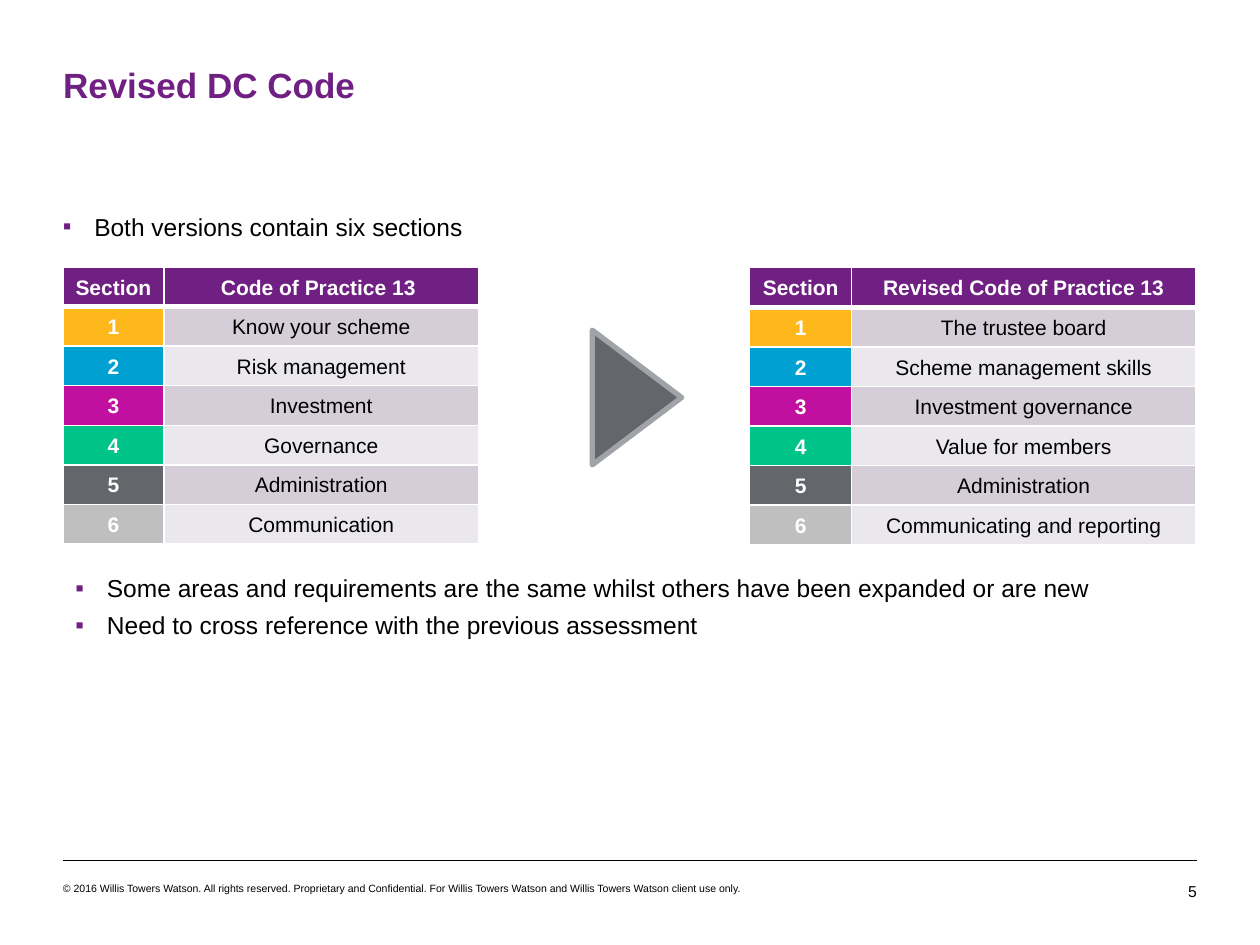
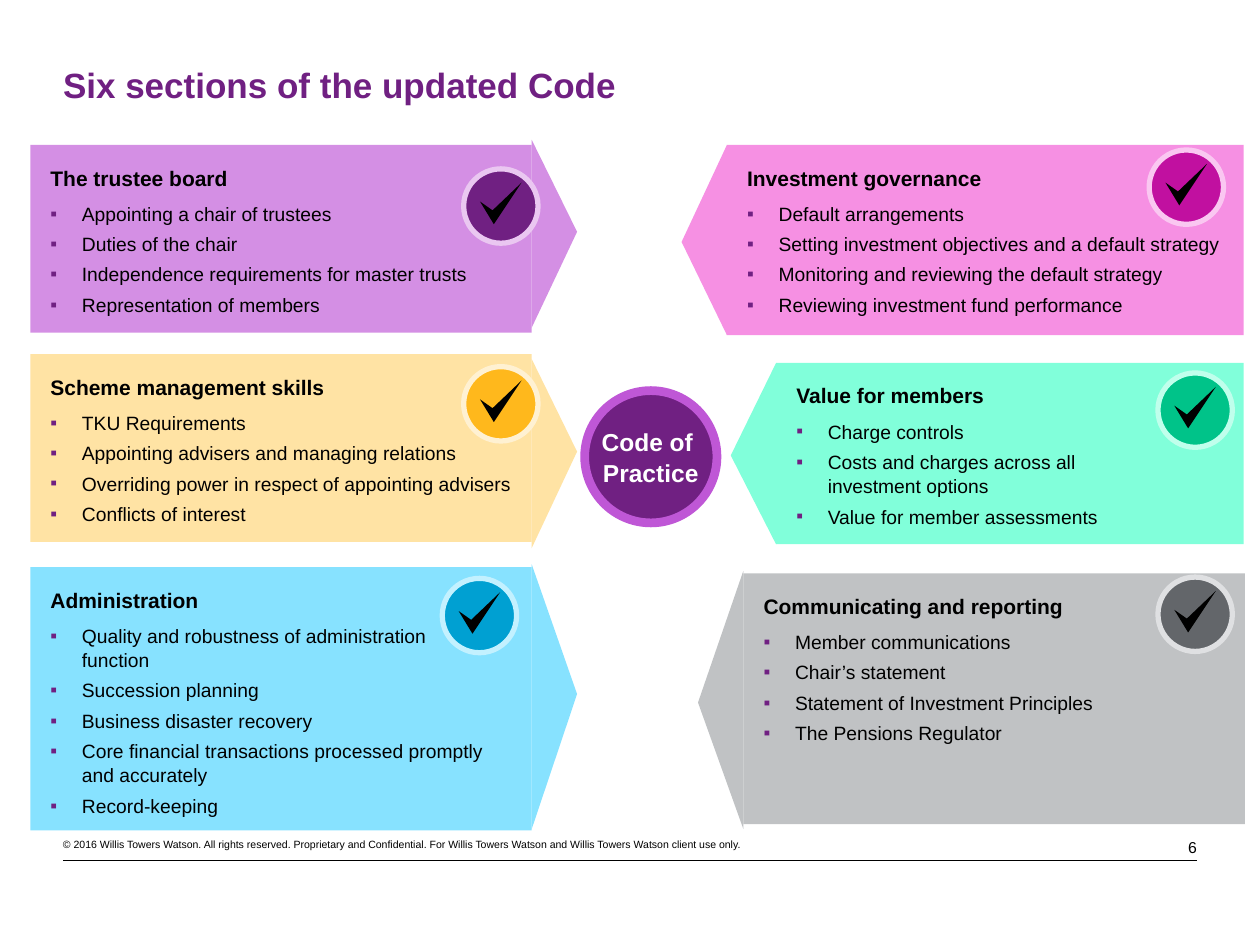
from lxml import etree
from pptx import Presentation
from pptx import util as u
from pptx.dml import color
from pptx.enum import shapes, text
from pptx.oxml import ns

FONT = "Arial"
PURPLE, BLACK, WHITE = "702082", "000000", "FFFFFF"
GOLD, BLUE, MAGENTA = "FFB81C", "00A0D2", "C110A0"
GREEN, GREY, SILVER = "00C389", "63666A", "BFBFBF"
LEFT, CENTER, RIGHT = text.PP_ALIGN.LEFT, text.PP_ALIGN.CENTER, text.PP_ALIGN.RIGHT
COPYRIGHT = ("© 2016 Willis Towers Watson. All rights reserved. Proprietary and Confidential. "
             "For Willis Towers Watson and Willis Towers Watson client use only.")


def paint(fill, hex_color):
    """Fill a shape, line, cell or font with one solid colour."""
    fill.solid()
    fill.fore_color.rgb = color.RGBColor.from_string(hex_color)


def write(frame, words, size, hex_color=BLACK, bold=False, align=LEFT,
          after=0, spacing=1.05, bullet=False):
    """Add a paragraph, starting with the empty first one."""
    paragraph = frame.paragraphs[0]
    if paragraph.runs:
        paragraph = frame.add_paragraph()
    paragraph.alignment = align
    paragraph.line_spacing = spacing
    paragraph.space_before = u.Pt(0)
    paragraph.space_after = u.Pt(after)
    if bullet:
        properties = paragraph._p.get_or_add_pPr()
        properties.set("marL", str(u.Inches(0.25)))
        properties.set("indent", str(-u.Inches(0.25)))
        bullet_color = etree.SubElement(properties, ns.qn("a:buClr"))
        etree.SubElement(bullet_color, ns.qn("a:srgbClr"), val=PURPLE)
        etree.SubElement(properties, ns.qn("a:buFont"), typeface=FONT)
        etree.SubElement(properties, ns.qn("a:buChar"), char="▪")
    for number, line in enumerate(words.split("\n")):
        if number:
            paragraph.add_line_break()
        run = paragraph.add_run()
        run.text = line
        run.font.name, run.font.size, run.font.bold = FONT, u.Pt(size), bold
        paint(run.font.fill, hex_color)


presentation = Presentation()
presentation.slide_width, presentation.slide_height = u.Inches(10), u.Inches(7.5)

# Title, footer rule, copyright line and page number of each slide
slides = []
for title_words, page, footer_top in [("Revised DC Code", "5", 7),
                                      ("Six sections of the updated Code", "6", 6.65)]:
    slide = presentation.slides.add_slide(presentation.slide_layouts[5])
    slides.append(slide)

    rule = slide.shapes.add_connector(shapes.MSO_CONNECTOR.STRAIGHT, u.Inches(0.5),
                                      u.Inches(6.83), u.Inches(9.5), u.Inches(6.83))
    paint(rule.line.fill, BLACK)
    rule.line.width = u.Pt(0.25)
    etree.SubElement(rule._element.spPr, ns.qn("a:effectLst"))

    title = slide.shapes.title
    title.left, title.top = u.Inches(0.5), u.Inches(0.5)
    title.width, title.height = u.Inches(9), u.Inches(0.34)
    copyright_box = slide.shapes.add_textbox(u.Inches(0.5), u.Inches(footer_top),
                                             u.Inches(5.77), u.Inches(0.1))
    page_box = slide.shapes.add_textbox(u.Inches(9.08), u.Inches(footer_top),
                                        u.Inches(0.42), u.Inches(0.15))
    for box in (title, copyright_box, page_box):
        frame = box.text_frame
        frame.word_wrap = True
        frame.auto_size = text.MSO_AUTO_SIZE.NONE
        frame.margin_left = frame.margin_right = frame.margin_top = frame.margin_bottom = 0
    title.text_frame.vertical_anchor = text.MSO_ANCHOR.MIDDLE
    write(title.text_frame, title_words, 20, PURPLE, bold=True, spacing=1.0)
    write(copyright_box.text_frame, COPYRIGHT, 6, spacing=1.0)
    write(page_box.text_frame, page, 9, align=RIGHT, spacing=1.0)

comparison, overview = slides

# Comparison: bullets above and below the tables
for left, top, width, height, lines in [
    (0.4, 1.62, 9.1, 0.36, ["Both versions contain six sections"]),
    (0.5, 4.49, 8.51, 0.63, [
        "Some areas and requirements are the same whilst others have been expanded or are new",
        "Need to cross reference with the previous assessment"]),
]:
    box = comparison.shapes.add_textbox(u.Inches(left), u.Inches(top),
                                        u.Inches(width), u.Inches(height))
    box.text_frame.word_wrap = True
    for line in lines:
        write(box.text_frame, line, 14, after=3.5, bullet=True)

# Comparison: the two section tables
section_colors = [GOLD, BLUE, MAGENTA, GREEN, GREY, SILVER]
for left, widths, header_height, names in [
    (0.5, (0.8, 2.5), 0.3,
     ["Code of Practice 13 ", "Know your scheme", "Risk management", "Investment",
      "Governance", "Administration", "Communication"]),
    (5.95, (0.81, 2.73), 0.32,
     ["Revised Code of Practice 13", "The trustee board", "Scheme management skills",
      "Investment governance", "Value for members", "Administration",
      "Communicating and reporting"]),
]:
    table = comparison.shapes.add_table(
        len(names), 2, u.Inches(left), u.Inches(2.12), u.Inches(sum(widths)),
        u.Inches(header_height + 0.3 * 6)).table
    table.horz_banding = False
    for column, width in zip(table.columns, widths):
        column.width = u.Inches(width)
    for row, name in enumerate(names):
        table.rows[row].height = u.Inches(0.3 if row else header_height)
        if row == 0:
            contents = [("Section", PURPLE, WHITE), (name, PURPLE, WHITE)]
        else:
            band = "D5CDD8" if row % 2 else "EBE8ED"
            contents = [(str(row), section_colors[row - 1], WHITE), (name, band, BLACK)]
        for column, (words, fill_color, font_color) in enumerate(contents):
            cell = table.cell(row, column)
            cell.margin_left = cell.margin_right = u.Inches(0.04)
            cell.margin_top = cell.margin_bottom = u.Inches(0.04)
            properties = cell._tc.get_or_add_tcPr()
            for side in "LRTB":
                thick = (row, side) in [(0, "B"), (1, "T")]
                border = etree.SubElement(properties, ns.qn("a:ln" + side),
                                          w=str(u.Pt(3 if thick else 1)))
                border_fill = etree.SubElement(border, ns.qn("a:solidFill"))
                etree.SubElement(border_fill, ns.qn("a:srgbClr"), val=WHITE)
            paint(cell.fill, fill_color)
            write(cell.text_frame, words, 12, font_color, bold=font_color == WHITE,
                  align=CENTER, spacing=1.17)

# Comparison: arrow from the old code to the revised one
arrow = comparison.shapes.add_shape(shapes.MSO_SHAPE.ISOSCELES_TRIANGLE, u.Inches(4.52),
                                    u.Inches(2.8), u.Inches(1.07), u.Inches(0.71))
arrow.rotation = 90
arrow.shadow.inherit = False
paint(arrow.fill, GREY)
paint(arrow.line.fill, "A0A3A7")
arrow.line.width = u.Pt(3)

# Overview: panel box, pointer (top, span), badge place, colours (panel, badge, ring), text
panels = [
    ((0.24, 1.15, 3.98, 1.49), (1.11, 1.49), (3.68, 1.34), ("D48FE4", PURPLE, "EAC7F1"),
     "The trustee board",
     ["Appointing a chair of trustees", "Duties of the chair",
      "Independence requirements for master trusts", "Representation of members"]),
    ((0.24, 2.81, 3.98, 1.49), (2.85, 1.5), (3.68, 2.91), ("FFE3A4", GOLD, "FFF1D2"),
     "Scheme management skills",
     ["TKU Requirements", "Appointing advisers and managing relations",
      "Overriding power in respect of appointing advisers", "Conflicts of interest"]),
    ((0.24, 4.5, 3.98, 2.09), (4.48, 2.1), (3.51, 4.59), ("87E2FF", BLUE, "C3F1FF"),
     "Administration",
     ["Quality and robustness of administration \nfunction", "Succession planning",
      "Business disaster recovery",
      "Core financial transactions processed promptly and accurately", "Record-keeping"]),
    ((5.77, 1.15, 4.1, 1.51), (1.15, 1.51), (9.12, 1.19), ("F690E3", MAGENTA, "FAC7F1"),
     "Investment governance",
     ["Default arrangements", "Setting investment objectives and a default strategy",
      "Monitoring and reviewing the default strategy",
      "Reviewing investment fund performance"]),
    ((6.16, 2.88, 3.71, 1.44), (2.88, 1.44), (9.19, 2.96), ("81FFDA", GREEN, "C0FFEC"),
     "Value for members",
     ["Charge controls", "Costs and charges across all \ninvestment options",
      "Value for member assessments"]),
    ((5.9, 4.55, 3.98, 1.99), (4.53, 2.05), (9.19, 4.58), ("C0C2C4", GREY, "DFE0E2"),
     "Communicating and reporting",
     ["Member communications", "Chair’s statement", "Statement of Investment Principles",
      "The Pensions Regulator"]),
]
POINTER_DEPTH = 0.36
BADGE_SIZE = 0.59
TICK = [(0.13, 0.26), (0.23, 0.33), (0.46, 0.11), (0.24, 0.44)]

for (left, top, width, height), (pointer_top, span), (badge_left, badge_top), \
        (panel_color, badge_color, ring_color), heading, items in panels:
    panel = overview.shapes.add_shape(shapes.MSO_SHAPE.RECTANGLE, u.Inches(left),
                                      u.Inches(top), u.Inches(width), u.Inches(height))
    frame = panel.text_frame
    frame.word_wrap = True
    frame.vertical_anchor = text.MSO_ANCHOR.TOP
    frame.margin_left = frame.margin_bottom = u.Inches(0.16)
    frame.margin_top, frame.margin_right = u.Inches(0.15), u.Inches(0.14)
    write(frame, heading, 12, bold=True, after=6)
    for item in items:
        write(frame, item, 11, after=3.5, bullet=True)

    # The pointer is turned about its centre, towards the middle of the slide
    on_left = left < 5
    center_x = left + width + POINTER_DEPTH / 2 if on_left else left - POINTER_DEPTH / 2
    pointer = overview.shapes.add_shape(
        shapes.MSO_SHAPE.ISOSCELES_TRIANGLE, u.Inches(center_x - span / 2),
        u.Inches(pointer_top + span / 2 - POINTER_DEPTH / 2),
        u.Inches(span), u.Inches(POINTER_DEPTH))
    pointer.adjustments[0] = 0.49
    pointer.rotation = 90 if on_left else 270

    badge = overview.shapes.add_shape(shapes.MSO_SHAPE.OVAL, u.Inches(badge_left),
                                      u.Inches(badge_top), u.Inches(BADGE_SIZE),
                                      u.Inches(BADGE_SIZE))
    points = [(u.Inches(badge_left + x), u.Inches(badge_top + y)) for x, y in TICK]
    builder = overview.shapes.build_freeform(*points[0])
    builder.add_line_segments(points[1:], close=True)
    tick = builder.convert_to_shape()

    for shape, fill_color in [(panel, panel_color), (pointer, panel_color),
                              (badge, badge_color), (tick, BLACK)]:
        shape.shadow.inherit = False
        paint(shape.fill, fill_color)
        shape.line.fill.background()
    paint(badge.line.fill, ring_color)
    badge.line.width = u.Pt(3)

# Overview: central circle
hub = overview.shapes.add_shape(shapes.MSO_SHAPE.OVAL, u.Inches(4.64), u.Inches(3.1),
                                u.Inches(1.05), u.Inches(1.05))
hub.shadow.inherit = False
paint(hub.fill, PURPLE)
paint(hub.line.fill, "BF57D6")
hub.line.width = u.Pt(5)
hub.text_frame.word_wrap = False
hub.text_frame.vertical_anchor = text.MSO_ANCHOR.MIDDLE
write(hub.text_frame, "Code of \nPractice", 14, WHITE, bold=True, align=CENTER)

presentation.save("out.pptx")
